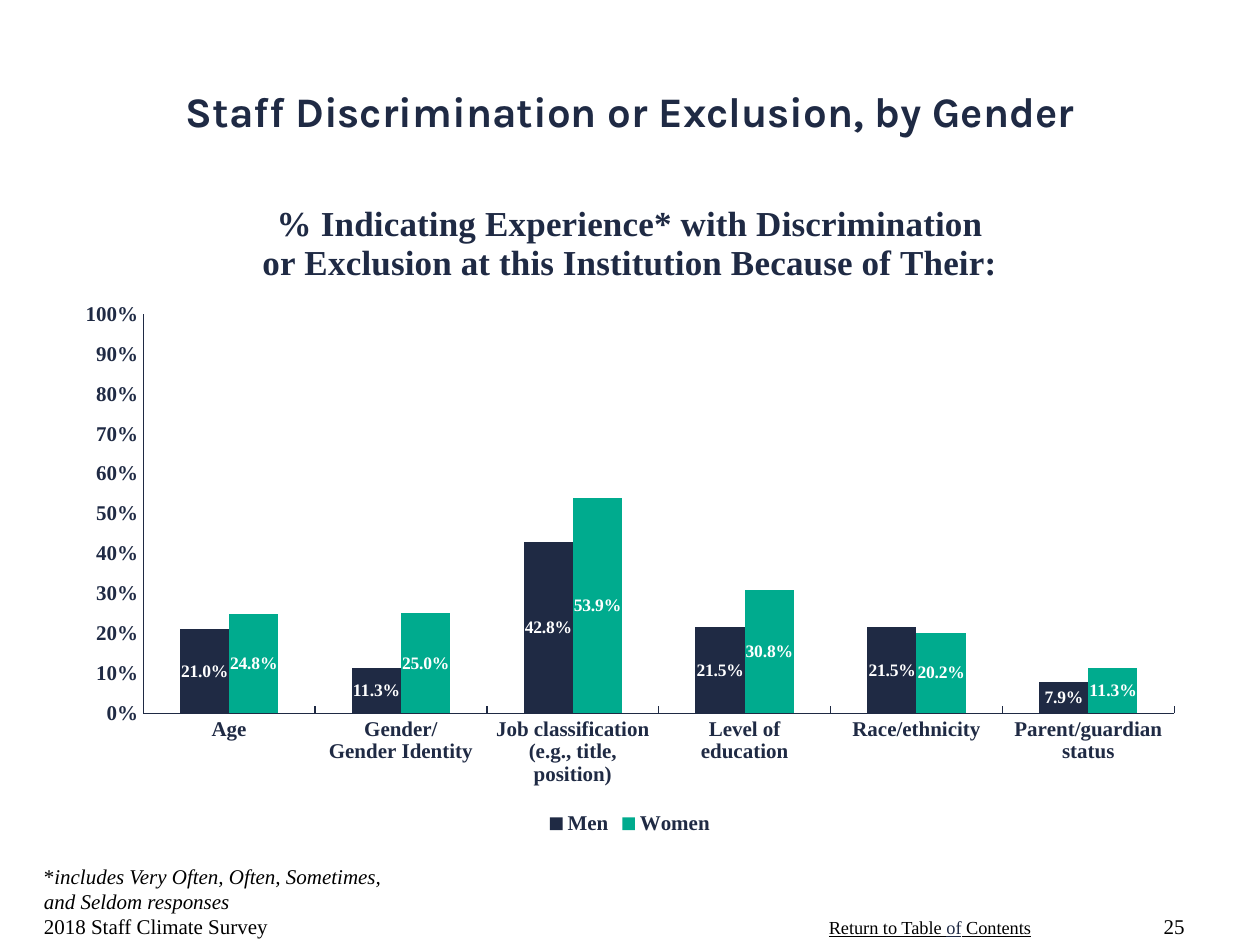
from pptx import Presentation
from pptx.chart.data import CategoryChartData
from pptx.dml.color import RGBColor
from pptx.enum.chart import XL_CHART_TYPE, XL_LABEL_POSITION, XL_LEGEND_POSITION, XL_TICK_MARK
from pptx.enum.text import MSO_ANCHOR, PP_ALIGN
from pptx.util import Pt

NAVY = RGBColor(0x1F, 0x2A, 0x44)
GREEN = RGBColor(0x00, 0xAB, 0x8E)
BLACK = RGBColor(0, 0, 0)
WHITE = RGBColor(0xFF, 0xFF, 0xFF)
SERIF = "Times New Roman"
LEFT, CENTER, RIGHT = PP_ALIGN.LEFT, PP_ALIGN.CENTER, PP_ALIGN.RIGHT
TOP, MIDDLE, BOTTOM = MSO_ANCHOR.TOP, MSO_ANCHOR.MIDDLE, MSO_ANCHOR.BOTTOM

# Content: text is a list of paragraphs, each a list of (text, run format)
TITLE = [[("Staff Discrimination or Exclusion, by Gender", {})]]
FOOTNOTE = [
    [("*", {}),
     ("includes Very Often, Often, Sometimes, and Seldom responses", {"italic": True})],
    [("2018 Staff Climate Survey", {})],
]
RETURN_LINE = [[("Return to Table ", {}), ("of", {"color": NAVY}), (" Contents", {})]]
PAGE_NUMBER = [[("25", {})]]

CHART_TITLE = ["% Indicating Experience* with Discrimination",
               "or Exclusion at this Institution Because of Their:"]
CATEGORIES = ["Age", "Gender/\nGender Identity",
              "Job classification (e.g., title, position)",
              "Level of education", "Race/ethnicity", "Parent/guardian status"]
SERIES = [
    ("Men", NAVY, (0.21, 0.113, 0.428, 0.215, 0.215, 0.079)),
    ("Women", GREEN, (0.248, 0.25, 0.539, 0.308, 0.202, 0.113)),
]


def set_font(font, size=12, color=BLACK, name=SERIF, bold=False, italic=False,
             underline=False):
    font.size, font.name = Pt(size), name
    font.bold, font.italic, font.underline = bold, italic, underline
    font.color.rgb = color


def add_text(s, paragraphs, box, align=LEFT, anchor=TOP, wrap=True, **style):
    tf = s.shapes.add_textbox(*map(Pt, box)).text_frame
    tf.word_wrap, tf.vertical_anchor = wrap, anchor
    for i, runs in enumerate(paragraphs):
        p = tf.paragraphs[0] if i == 0 else tf.add_paragraph()
        p.alignment = align
        for text, fmt in runs:
            r = p.add_run()
            r.text = text
            set_font(r.font, **{**style, **fmt})


def add_survey_chart(s, box):
    data = CategoryChartData(number_format="0.0%")
    data.categories = CATEGORIES
    for name, _, values in SERIES:
        data.add_series(name, values)
    chart = s.shapes.add_chart(XL_CHART_TYPE.COLUMN_CLUSTERED,
                               *map(Pt, box), data).chart
    set_font(chart.font, size=10, color=NAVY, bold=True)

    # Heading and legend
    tf = chart.chart_title.text_frame
    tf.text = "\n".join(CHART_TITLE)
    for p in tf.paragraphs:
        set_font(p.runs[0].font, size=20, color=NAVY, bold=True)
    chart.chart_title.include_in_layout = False
    chart.has_legend = True
    chart.legend.position = XL_LEGEND_POSITION.BOTTOM
    chart.legend.include_in_layout = False
    set_font(chart.legend.font, color=NAVY, bold=True)

    # Axes
    for axis, tick in ((chart.category_axis, XL_TICK_MARK.INSIDE),
                       (chart.value_axis, XL_TICK_MARK.NONE)):
        axis.has_major_gridlines = False
        axis.major_tick_mark, axis.minor_tick_mark = tick, XL_TICK_MARK.NONE
        axis.format.line.color.rgb = NAVY
        axis.format.line.width = Pt(0.75)
        set_font(axis.tick_labels.font, color=NAVY, bold=True)
    value_axis = chart.value_axis
    value_axis.minimum_scale, value_axis.maximum_scale = 0, 1
    value_axis.major_unit = 0.1
    value_axis.tick_labels.number_format = "0%"
    value_axis.tick_labels.number_format_is_linked = False

    # Columns and their labels
    plot = chart.plots[0]
    plot.gap_width, plot.overlap, plot.vary_by_categories = 150, 0, False
    for series, (_, color, _) in zip(plot.series, SERIES):
        series.format.fill.solid()
        series.format.fill.fore_color.rgb = color
        labels = series.data_labels
        labels.show_value = True
        labels.position = XL_LABEL_POSITION.CENTER
        labels.number_format, labels.number_format_is_linked = "0.0%", False
        set_font(labels.font, size=10, color=WHITE, bold=True)


def main():
    prs = Presentation()
    prs.slide_width, prs.slide_height = Pt(720), Pt(540)
    s = prs.slides.add_slide(prs.slide_layouts[6])

    add_text(s, RETURN_LINE, (466.5, 520, 131, 20), wrap=False,
             size=10.5, underline=True)
    add_text(s, TITLE, (0, 18, 720, 90), align=CENTER, anchor=MIDDLE,
             size=24, color=NAVY, name="Karla", bold=True)
    add_survey_chart(s, (36, 102, 648, 378))
    add_text(s, FOOTNOTE, (18, 504, 228, 36), anchor=BOTTOM)
    add_text(s, PAGE_NUMBER, (648, 504, 36, 36), align=RIGHT, anchor=BOTTOM)

    prs.save("out.pptx")


if __name__ == "__main__":
    main()
